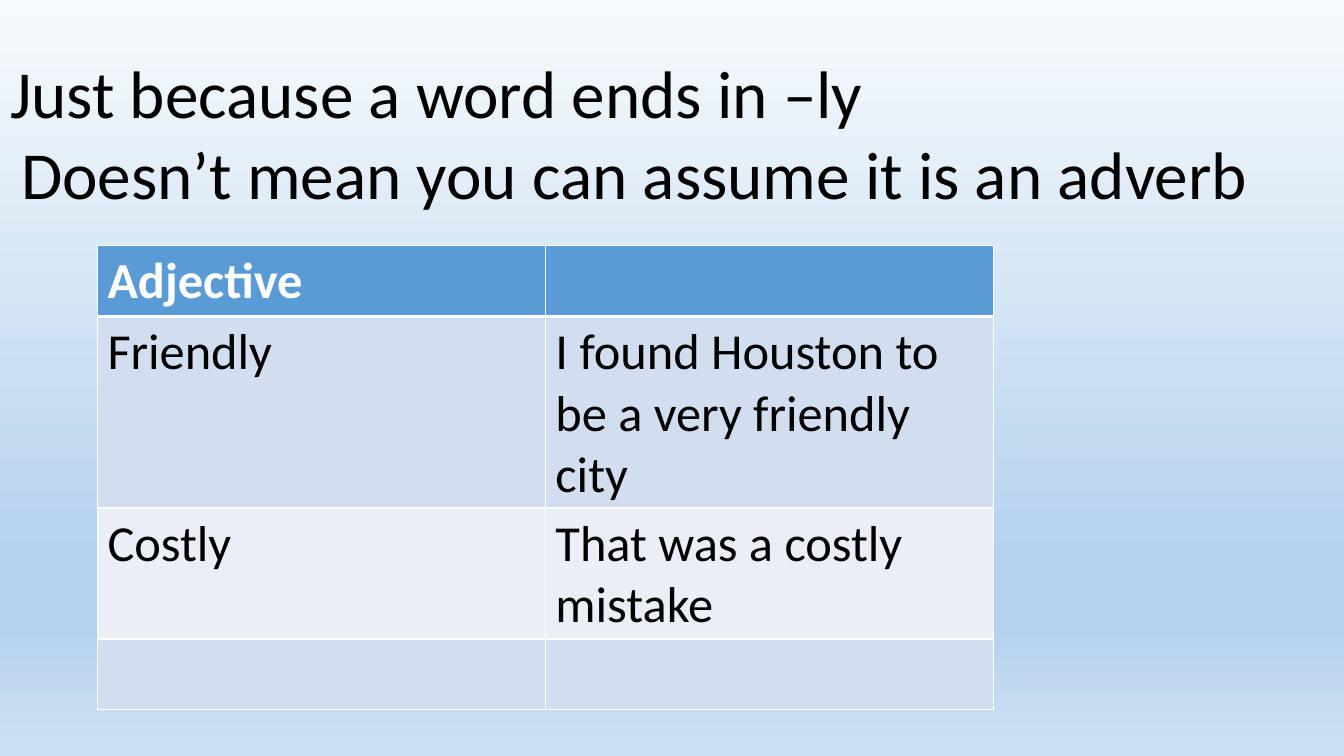
from dataclasses import dataclass

from pptx import Presentation
from pptx import util as u
from pptx.dml.color import RGBColor
from pptx.enum import text
from pptx.oxml import parse_xml
from pptx.oxml.ns import nsdecls, qn


@dataclass(frozen=True)
class Theme:
    font: str = "Calibri"
    title_size: int = 48
    cell_size: int = 36
    ink: str = "000000"
    white: str = "FFFFFF"
    header: str = "5B9BD5"
    bands: tuple = ("D2DEEF", "EAEFF7")
    sky: tuple = ((0, "F7FAFD"), (74, "B5D2EC"), (83, "B5D2EC"), (100, "CEE1F2"))


class Deck:
    def __init__(self, prs, theme):
        self.theme = theme
        self.s = prs.slides.add_slide(prs.slide_layouts[5])

    def background(self):
        fill = self.s.background.fill
        fill.gradient()
        fill.gradient_angle = 270
        stops = self.s.element.find(".//" + qn("a:gsLst"))
        for stop in list(stops):
            stops.remove(stop)
        for pos, color in self.theme.sky:
            stops.append(parse_xml(
                f'<a:gs {nsdecls("a")} pos="{pos * 1000}">'
                f'<a:srgbClr val="{color}"/></a:gs>'))

    def run(self, p, words, size, color, bold=False):
        r = p.add_run()
        r.text = words
        r.font.name = self.theme.font
        r.font.size = u.Pt(size)
        r.font.bold = bold
        r.font.color.rgb = RGBColor.from_string(color)

    def title(self, box, lines):
        sp = self.s.shapes.title
        sp.left, sp.top, sp.width, sp.height = map(u.Pt, box)
        tf = sp.text_frame
        tf.word_wrap = False
        tf.auto_size = text.MSO_AUTO_SIZE.SHAPE_TO_FIT_TEXT
        tf.vertical_anchor = text.MSO_ANCHOR.TOP
        for i, (words, align) in enumerate(lines):
            p = tf.add_paragraph() if i else tf.paragraphs[0]
            p.alignment = align
            self.run(p, words, self.theme.title_size, self.theme.ink)

    def border(self, cell, side, width):
        pr = cell._tc.get_or_add_tcPr()
        fill = pr.find(qn("a:solidFill"))
        fill.addprevious(parse_xml(
            f'<a:{side} {nsdecls("a")} w="{u.Pt(width)}"><a:solidFill>'
            f'<a:srgbClr val="{self.theme.white}"/></a:solidFill></a:{side}>'))

    def table(self, left, top, col_width, heights, rows):
        t = self.theme
        cols = len(rows[0])
        tbl = self.s.shapes.add_table(
            len(rows), cols, u.Pt(left), u.Pt(top),
            u.Pt(col_width * cols), u.Pt(sum(heights))).table
        for i, (height, row) in enumerate(zip(heights, rows)):
            tbl.rows[i].height = u.Pt(height)
            for j, words in enumerate(row):
                cell = tbl.cell(i, j)
                cell.fill.solid()
                cell.fill.fore_color.rgb = RGBColor.from_string(
                    t.bands[(i - 1) % 2] if i else t.header)
                for side in ("lnL", "lnR", "lnT", "lnB"):
                    thick = (i, side) in ((0, "lnB"), (1, "lnT"))
                    self.border(cell, side, 3 if thick else 1)
                if words:
                    self.run(cell.text_frame.paragraphs[0], words, t.cell_size,
                             t.ink if i else t.white, bold=i == 0)


def main():
    prs = Presentation()
    prs.slide_width, prs.slide_height = u.Pt(960), u.Pt(540)
    deck = Deck(prs, Theme())
    deck.background()
    deck.title((0, 33, 906.5, 240), [
        ("Just because a word ends in –ly", text.PP_ALIGN.LEFT),
        ("Doesn’t mean you can assume it is an adverb", text.PP_ALIGN.CENTER),
    ])
    deck.table(69.6, 175.6, 320, (50.4, 136.8, 93.6, 50.4), [
        ("Adjective", ""),
        ("Friendly", "I found Houston to be a very friendly city"),
        ("Costly", "That was a costly mistake"),
        ("", ""),
    ])
    prs.save("out.pptx")


if __name__ == "__main__":
    main()
